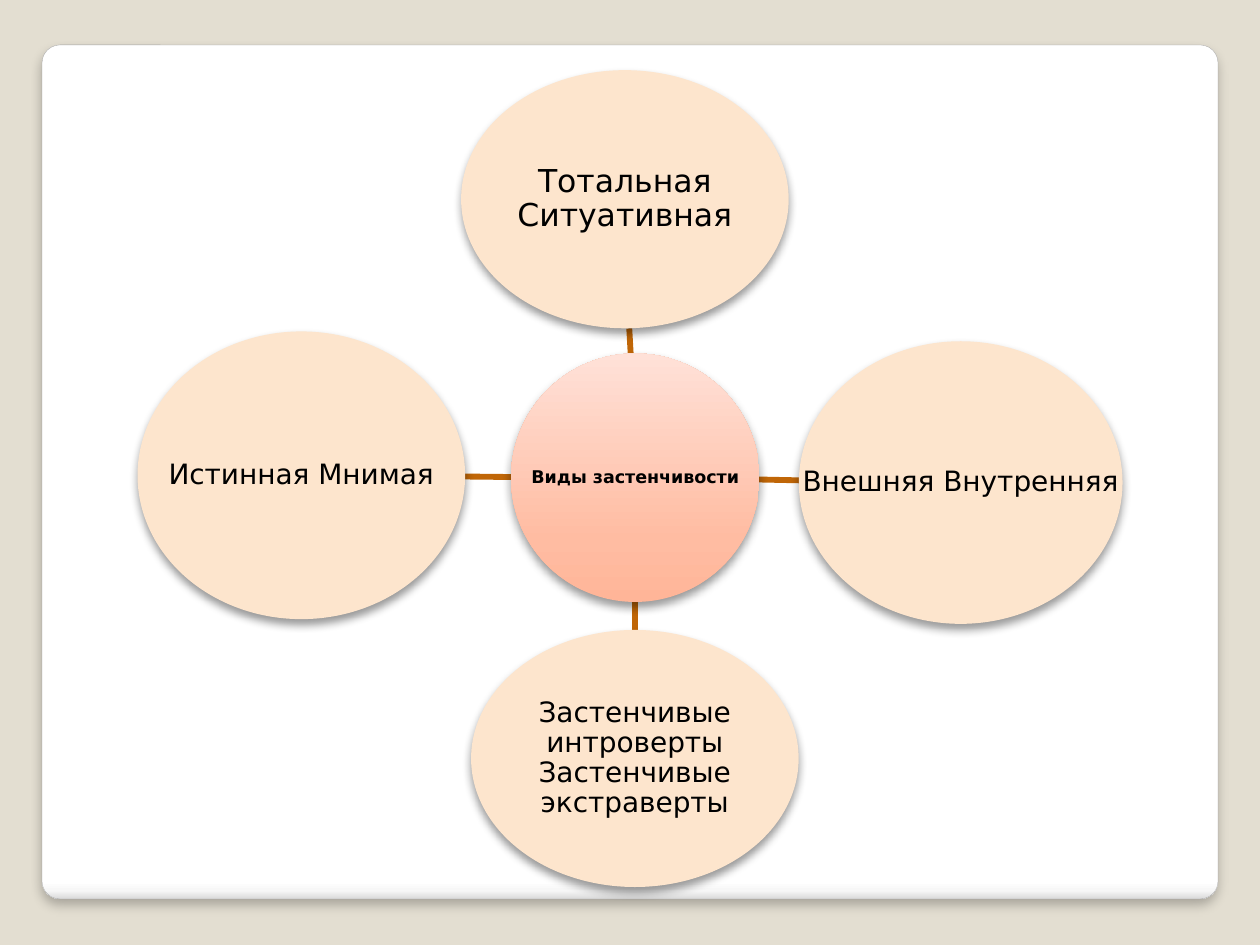
"""Slide with a hub circle and four linked ovals on kinds of shyness."""
from lxml import etree
from pptx import Presentation
from pptx.dml.color import RGBColor
from pptx.enum.shapes import MSO_CONNECTOR, MSO_SHAPE
from pptx.enum.text import MSO_ANCHOR, PP_ALIGN
from pptx.oxml.ns import qn
from pptx.util import Pt

OVAL, ROUND = MSO_SHAPE.OVAL, MSO_SHAPE.ROUNDED_RECTANGLE
LINE = MSO_CONNECTOR.STRAIGHT
MIDDLE, CENTER = MSO_ANCHOR.MIDDLE, PP_ALIGN.CENTER

HUES = {"page": "E3DED1", "edge": "A4A4A4", "link": "C06607",
        "oval": "FDE5CD", "text": "000000", "shade": "000000"}
PANEL = [(0, "FFFFFF"), (98, "FFFFFF"), (99, "F7F7F7"), (100, "DADADA")]
HUB = [(0, "FFB598"), (25, "FFBCA2"), (100, "FFE1D8")]


def shade(shape, alpha, blur, dist):
    shape.shadow.inherit = False
    effects = shape.element.spPr.find(qn("a:effectLst"))
    outer = etree.SubElement(effects, qn("a:outerShdw"), blurRad=str(Pt(blur)),
                             dist=str(Pt(dist)), dir="5400000", rotWithShape="0")
    tint = etree.SubElement(outer, qn("a:srgbClr"), val=HUES["shade"])
    etree.SubElement(tint, qn("a:alpha"), val=str(alpha * 1000))


def blend(shape, stops, angle):
    shape.fill.gradient()
    shape.fill.gradient_angle = angle
    ramp = next(shape.element.spPr.iter(qn("a:gsLst")))
    for stop in list(ramp):
        ramp.remove(stop)
    for place, hue in stops:
        stop = etree.SubElement(ramp, qn("a:gs"), pos=str(place * 1000))
        etree.SubElement(stop, qn("a:srgbClr"), val=hue)


deck = Presentation()
deck.slide_width, deck.slide_height = Pt(720), Pt(540)
slide = deck.slides.add_slide(deck.slide_layouts[6])
slide.background.fill.solid()
slide.background.fill.fore_color.rgb = RGBColor.from_string(HUES["page"])

panel = slide.shapes.add_shape(ROUND, Pt(24), Pt(25.7), Pt(672), Pt(488))
panel.adjustments[0] = 0.021
blend(panel, PANEL, 270)
panel.line.color.rgb = RGBColor.from_string(HUES["edge"])
panel.line.width = Pt(0.16)
shade(panel, 25, 6, 4)

links = [(360.4, 202.3, 359.6, 187.7), (433.6, 274, 456.6, 274.5),
         (362.9, 344, 362.9, 360), (292.2, 272.6, 265.8, 272.3)]
for ends in links:
    link = slide.shapes.add_connector(LINE, *[Pt(end) for end in ends])
    link.line.color.rgb = RGBColor.from_string(HUES["link"])
    link.line.width = Pt(3.35)
    etree.SubElement(link.element.spPr, qn("a:effectLst"))

ovals = [
    ("Виды застенчивости", 292, 202, 142, 142, 10, False),
    ("Тотальная Ситуативная", 263.5, 40.1, 187.2, 147.5, 18, True),
    ("Внешняя Внутренняя", 456.5, 195, 185, 161.5, 16, False),
    ("Застенчивые интроверты Застенчивые экстраверты",
     269.2, 360, 187.2, 146.9, 16, True),
    ("Истинная Мнимая", 78.6, 189.4, 187.2, 164.4, 16, False),
]
for words, left, top, width, height, size, wrap in ovals:
    hub = words == ovals[0][0]
    oval = slide.shapes.add_shape(OVAL, Pt(left), Pt(top), Pt(width), Pt(height))
    if hub:
        blend(oval, HUB, 90)
    else:
        oval.fill.solid()
        oval.fill.fore_color.rgb = RGBColor.from_string(HUES["oval"])
    oval.line.fill.background()
    shade(oval, 40, 5.2, 3)
    frame = oval.text_frame
    for side in ("left", "top", "right", "bottom"):
        setattr(frame, f"margin_{side}", Pt(0.7))
    frame.word_wrap, frame.vertical_anchor = wrap, MIDDLE
    para = frame.paragraphs[0]
    para.alignment, para.line_spacing = CENTER, 0.9
    run = para.add_run()
    run.text = words
    style = {"name": "DejaVu Sans", "size": Pt(size), "bold": hub}
    for key, value in style.items():
        setattr(run.font, key, value)
    run.font.color.rgb = RGBColor.from_string(HUES["text"])

deck.save("out.pptx")
